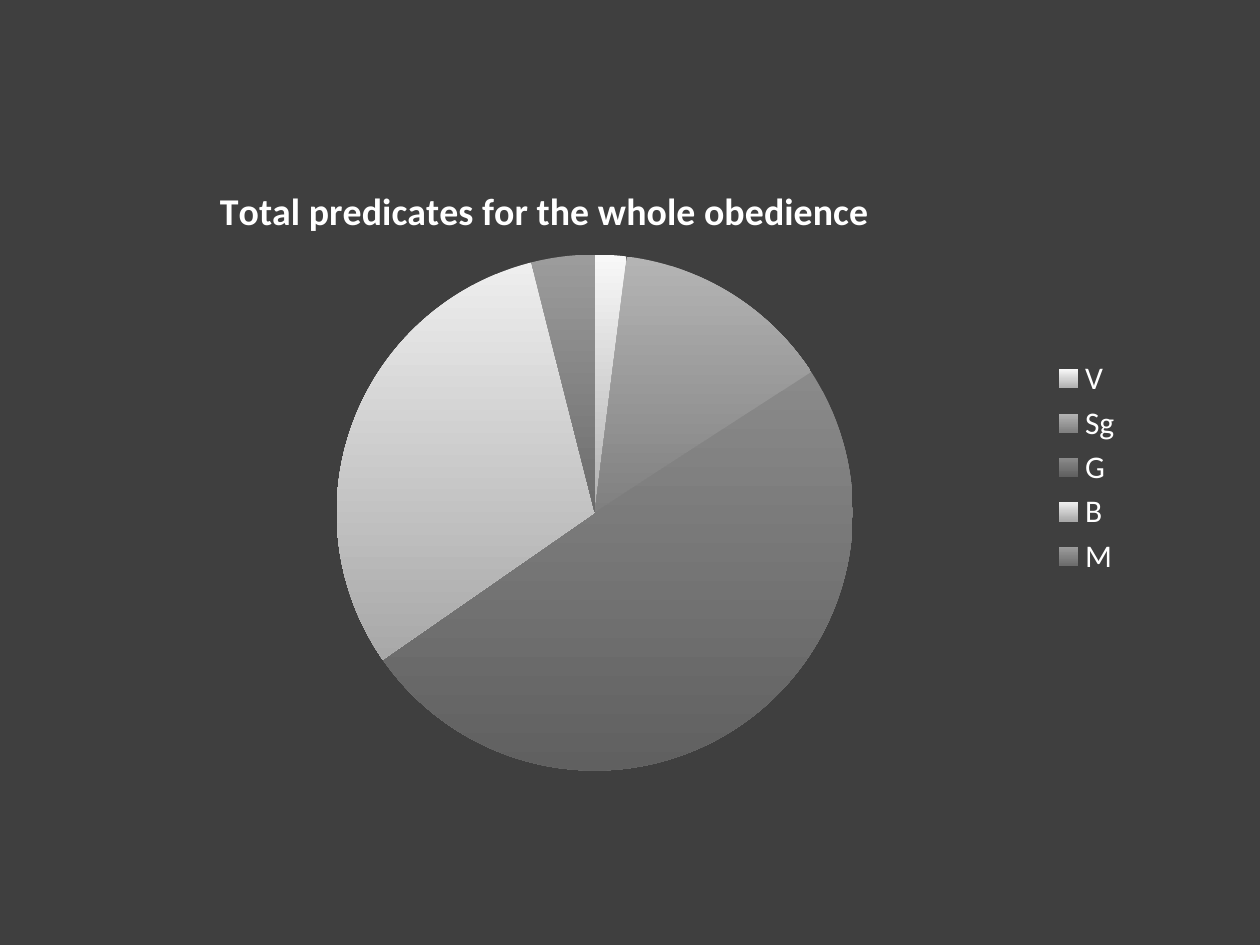
import pptx
import pptx.chart.data
import pptx.dml.color
import pptx.enum.chart
import pptx.oxml
import pptx.oxml.ns
import pptx.util
from pptx.util import Inches

WHITE = "FFFFFF"
PREDICATES = [
    ("V", 2, "F8F8F8", "B0B0B0"),
    ("Sg", 14, "B4B4B4", "808080"),
    ("G", 50, "8A8A8A", "606060"),
    ("B", 31, "EEEEEE", "A8A8A8"),
    ("M", 4, "9C9C9C", "6C6C6C"),
]


def color(value):
    return pptx.dml.color.RGBColor.from_string(value)


def style_font(font, size, bold=False):
    font.name = "Calibri"
    font.size = pptx.util.Pt(size)
    font.bold = bold
    font.color.rgb = color(WHITE)


def manual_layout(**settings):
    values = "".join(f'<c:{key} val="{value}"/>' for key, value in settings.items())
    return pptx.oxml.parse_xml(
        f'<c:layout {pptx.oxml.ns.nsdecls("c")}>'
        f"<c:manualLayout>{values}</c:manualLayout></c:layout>"
    )


def replace_layout(parent, layout, index):
    for existing in parent.findall(pptx.oxml.ns.qn("c:layout")):
        parent.remove(existing)
    parent.insert(index, layout)


def shade_slice(slice_format, top, bottom):
    fill = slice_format.fill
    fill.gradient()
    fill.gradient_angle = 270
    for stop, shade in zip(fill.gradient_stops, (top, bottom)):
        stop.color.rgb = color(shade)
    slice_format.line.fill.background()


def add_title(chart, title):
    chart.has_title = True
    frame = chart.chart_title.text_frame
    frame.text = title
    style_font(frame.paragraphs[0].runs[0].font, 21.6, bold=True)
    chart.chart_title.include_in_layout = False
    position = manual_layout(xMode="edge", yMode="edge", x=0.07, y=0.05)
    replace_layout(chart.chart_title._element, position, 1)


def add_legend(chart):
    chart.has_legend = True
    chart.legend.position = pptx.enum.chart.XL_LEGEND_POSITION.RIGHT
    chart.legend.include_in_layout = False
    style_font(chart.legend.font, 18)


def add_predicate_pie(slide):
    chart_data = pptx.chart.data.CategoryChartData()
    chart_data.categories = [label for label, *_ in PREDICATES]
    chart_data.add_series("Series 1", [total for _, total, *_ in PREDICATES])
    chart = slide.shapes.add_chart(
        pptx.enum.chart.XL_CHART_TYPE.PIE,
        Inches(1.14), Inches(1.15), Inches(7.87), Inches(5.12), chart_data,
    ).chart
    style_font(chart.font, 18)
    add_title(chart, "Total predicates for the whole obedience")
    add_legend(chart)
    pie = chart.plots[0]
    pie.vary_by_categories = True
    for index, (_, _, top, bottom) in enumerate(PREDICATES):
        shade_slice(pie.series[0].points[index].format, top, bottom)
    plot_area = chart._chartSpace.chart.plotArea
    position = manual_layout(
        layoutTarget="inner", xMode="edge", yMode="edge",
        x=0.19, y=0.17, w=0.53, h=0.8,
    )
    replace_layout(plot_area, position, 0)


def main():
    presentation = pptx.Presentation()
    presentation.slide_width = Inches(10)
    presentation.slide_height = Inches(7.5)
    slide = presentation.slides.add_slide(presentation.slide_layouts[6])
    slide.background.fill.solid()
    slide.background.fill.fore_color.rgb = color("3F3F3F")
    add_predicate_pie(slide)
    presentation.save("out.pptx")


if __name__ == "__main__":
    main()
